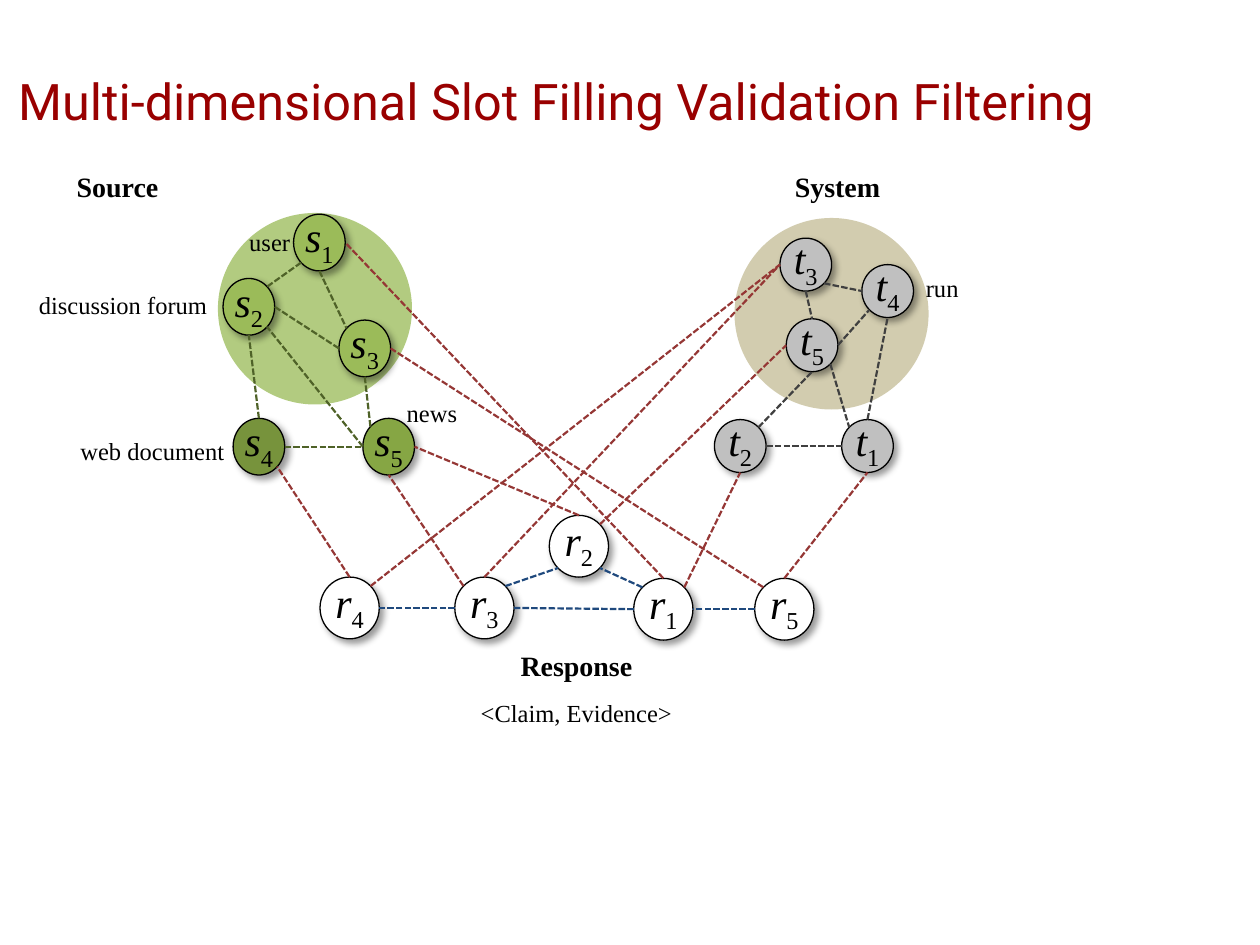
from math import cos, radians, sin

from lxml.etree import SubElement
from pptx import Presentation
from pptx.dml.color import RGBColor
from pptx.enum.dml import MSO_LINE
from pptx.enum.shapes import MSO_CONNECTOR, MSO_SHAPE
from pptx.enum.text import MSO_ANCHOR, PP_ALIGN
from pptx.oxml.ns import qn
from pptx.util import Pt

PX = 9144
BLACK = RGBColor(0x00, 0x00, 0x00)
WHITE = RGBColor(0xFF, 0xFF, 0xFF)
DARK_RED = RGBColor(0x99, 0x00, 0x00)
TAN = RGBColor(0xC4, 0xBD, 0x97)
GREEN = RGBColor(0x9B, 0xBB, 0x59)
MID_GREEN = RGBColor(0x86, 0xA6, 0x44)
DEEP_GREEN = RGBColor(0x77, 0x93, 0x3C)
GRAY = RGBColor(0xC0, 0xC0, 0xC0)
GREEN_EDGE = RGBColor(0x4F, 0x62, 0x28)
GRAY_EDGE = RGBColor(0x40, 0x40, 0x40)
BLUE_EDGE = RGBColor(0x1F, 0x49, 0x7D)
RED_EDGE = RGBColor(0x95, 0x37, 0x35)

SITES = ["N", "NW", "W", "SW", "S", "SE", "E", "NE"]
SIZES = {"s": (41, 45), "t": (41, 42), "r": (47, 49)}
NODES = [
    ("s1", 233, 170, GREEN), ("s2", 177, 221, GREEN), ("s3", 269, 254, GREEN),
    ("s4", 185, 332, DEEP_GREEN), ("s5", 288, 332, MID_GREEN),
    ("t1", 668, 333, GRAY), ("t2", 567, 333, GRAY), ("t3", 619, 189, GRAY),
    ("t4", 684, 210, GRAY), ("t5", 624, 253, GRAY),
    ("r1", 503, 459, WHITE), ("r2", 436, 409, WHITE), ("r3", 361, 458, WHITE),
    ("r4", 254, 458, WHITE), ("r5", 599, 459, WHITE),
]
EDGES = {
    GREEN_EDGE: [
        "s1 SW s2 NE", "s3 W s2 E", "s1 S s3 NW", "s4 N s2 S",
        "s4 E s5 W", "s5 NW s3 S", "s5 W s2 SE",
    ],
    GRAY_EDGE: [
        "t3 SE t4 W", "t3 S t5 N", "t5 E t4 SW", "t1 N t4 S",
        "t2 NE t5 S", "t2 E t1 W", "t5 SE t1 NW",
    ],
    BLUE_EDGE: [
        "r3 NE r2 SW", "r1 NW r2 SE", "r1 W r3 E", "r3 W r4 E", "r5 W r1 E",
    ],
    RED_EDGE: [
        "r4 N s4 SE", "r2 N s5 E", "r2 NE t5 W", "r3 N t3 W", "r4 NE t3 W",
        "r3 NW s5 S", "r5 N t1 S", "r5 NW s3 E", "r1 N s1 E", "r1 NE t2 S",
    ],
}
LABELS = [
    ("discussion forum", 21, 225, 154), ("news", 313, 311, 123),
    ("web document", 54, 341, 154), ("user", 188, 175, 67), ("run", 725, 212, 67),
]


class Deck:
    """Holds the text style and the current slide, and draws its elements."""

    def __init__(self, s, font="Times New Roman"):
        self.s = s
        self.font = font
        self.nodes = {}

    def run(self, p, text, size, color=BLACK, font=None, bold=False, italic=False):
        r = p.add_run()
        r.text = text
        r.font.name = font or self.font
        r.font.size = Pt(size)
        r.font.bold = bold
        r.font.italic = italic
        r.font.color.rgb = color
        return r

    def ellipse(self, x, y, w, h, color):
        sp = self.s.shapes.add_shape(MSO_SHAPE.OVAL, x * PX, y * PX, w * PX, h * PX)
        sp.shadow.inherit = False
        sp.fill.solid()
        sp.fill.fore_color.rgb = color
        return sp

    def disc(self, x, y, w, h, color):
        sp = self.ellipse(x, y, w, h, color)
        sp.line.fill.background()
        clr = sp._element.spPr.find(".//" + qn("a:srgbClr"))
        SubElement(clr, qn("a:alpha"), val="76000")

    def node(self, name, x, y, color):
        sp = self.ellipse(x, y, *SIZES[name[0]], color)
        sp.line.color.rgb = BLACK
        sp.line.width = Pt(0.75)
        effects = sp._element.spPr.find(qn("a:effectLst"))
        shadow = SubElement(effects, qn("a:outerShdw"), blurRad=str(Pt(4)),
                            dist=str(Pt(3)), dir="2700000", rotWithShape="0")
        clr = SubElement(shadow, qn("a:srgbClr"), val=str(BLACK))
        SubElement(clr, qn("a:alpha"), val="40000")
        tf = sp.text_frame
        tf.word_wrap = False
        tf.vertical_anchor = MSO_ANCHOR.MIDDLE
        tf.margin_left = tf.margin_right = 10 * PX
        tf.margin_top, tf.margin_bottom = 0, 5 * PX
        p = tf.paragraphs[0]
        p.alignment = PP_ALIGN.CENTER
        self.run(p, name[0], 24, italic=True)
        r = self.run(p, name[1], 24)
        r._r.get_or_add_rPr().set("baseline", "-25000")
        self.nodes[name] = sp

    def site(self, name, side):
        sp = self.nodes[name]
        angle = radians(90 + 45 * SITES.index(side))
        return (round(sp.left + sp.width / 2 * (1 + cos(angle))),
                round(sp.top + sp.height / 2 * (1 - sin(angle))))

    def edge(self, start, start_side, end, end_side, color):
        line = self.s.shapes.add_connector(
            MSO_CONNECTOR.STRAIGHT, *self.site(start, start_side), *self.site(end, end_side))
        line.line.color.rgb = color
        line.line.width = Pt(1.25)
        line.line.dash_style = MSO_LINE.SQUARE_DOT
        SubElement(line._element.spPr, qn("a:effectLst"))

    def text(self, text, x, y, w, h, size, align=PP_ALIGN.LEFT, **style):
        tf = self.s.shapes.add_textbox(x * PX, y * PX, w * PX, h * PX).text_frame
        tf.word_wrap = True
        p = tf.paragraphs[0]
        p.alignment = align
        self.run(p, text, size, **style)
        return tf


def main():
    prs = Presentation()
    prs.slide_width, prs.slide_height = 1000 * PX, 750 * PX
    deck = Deck(prs.slides.add_slide(prs.slide_layouts[6]))

    deck.disc(583, 173, 154, 152, TAN)
    deck.disc(173, 169, 154, 152, GREEN)
    for node in NODES:
        deck.node(*node)
    for color, edges in EDGES.items():
        for edge in edges:
            deck.edge(*edge.split(), color)

    for text, x, y, w in LABELS:
        deck.text(text, x, y, w, 34, 14)
    deck.text("Source", 51, 130, 125, 37, 16, bold=True)
    deck.text("System", 621, 130, 108, 37, 16, bold=True)
    tf = deck.text("Response", 369, 510, 177, 74, 16, PP_ALIGN.CENTER, bold=True)
    p = tf.add_paragraph()
    p.alignment = PP_ALIGN.CENTER
    p.space_before = Pt(9)
    deck.run(p, "<Claim, Evidence>", 14)

    tf = deck.text("Multi-dimensional Slot Filling Validation Filtering", 0, 42, 883, 75,
                   28.8, PP_ALIGN.CENTER, color=DARK_RED, font="Roboto")
    tf.vertical_anchor = MSO_ANCHOR.MIDDLE
    prs.save("out.pptx")


if __name__ == "__main__":
    main()
